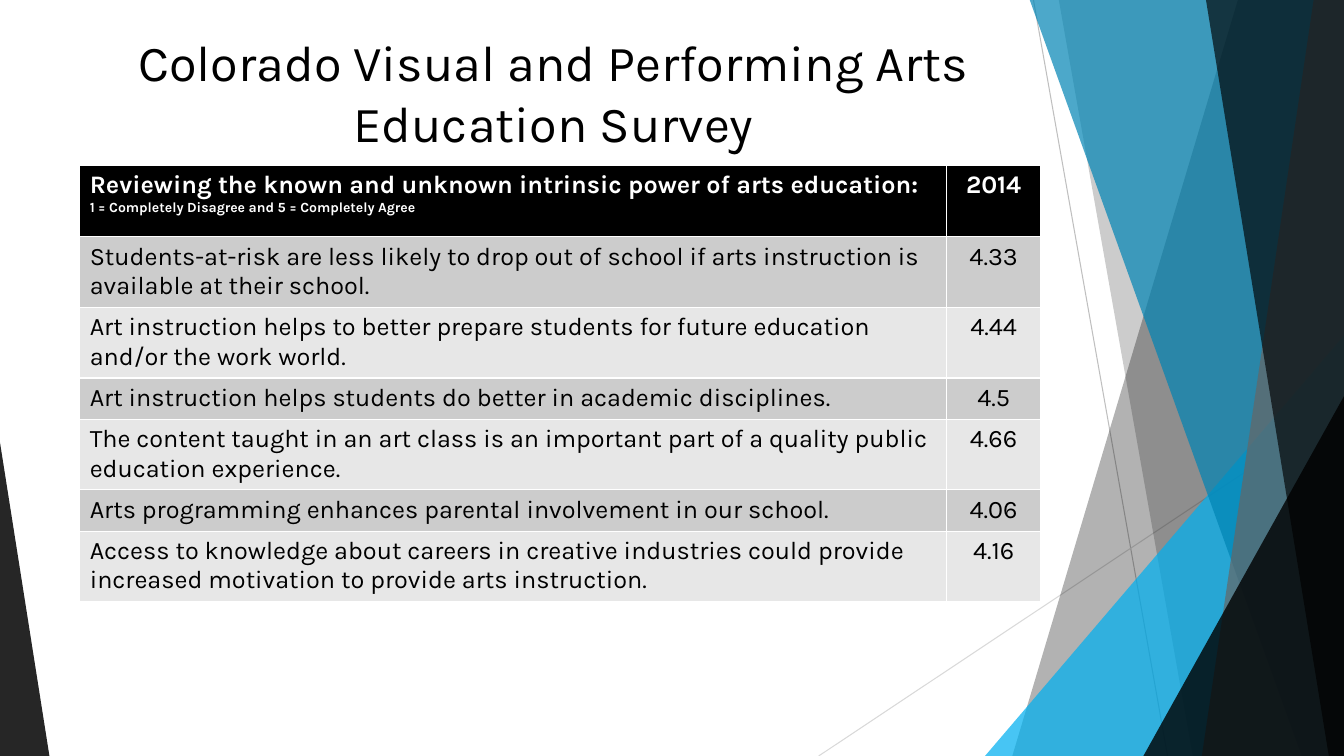
from lxml import etree
from pptx import Presentation
from pptx import util as u
from pptx.dml.color import RGBColor
from pptx.enum import shapes, text
from pptx.oxml import ns

TITLE = "Colorado Visual and Performing Arts Education Survey"
HEAD = ("Reviewing the known and unknown intrinsic power of arts education:", "2014")
SCALE = "1 = Completely Disagree and 5 = Completely Agree"
SCORES = [
    ("Students-at-risk are less likely to drop out of school if arts instruction is available at their school.", "4.33"),
    ("Art instruction helps to better prepare students for future education and/or the work world.", "4.44"),
    ("Art instruction helps students do better in academic disciplines.", "4.5"),
    ("The content taught in an art class is an important part of a quality public education experience.", "4.66"),
    ("Arts programming enhances parental involvement in our school.", "4.06"),
    ("Access to knowledge about careers in creative industries could provide increased motivation to provide arts instruction.", "4.16"),
]
COLS = (860, 93)
ROWS = (71, 70, 70, 41, 70, 41, 70)

HUES = {
    "black": "000000", "white": "FFFFFF", "dark": "CCCCCC", "light": "E7E7E7",
    "sky": "00B0F0", "blue": "0084B4", "gray": "666666",
    "rule": "BFBFBF", "pale": "D9D9D9",
}
FONT = "Karla"
WIDE, HIGH = 1333, 750
PX = 9144

RULES = [((1025, 0), (1158, HIGH), "rule"), ((WIDE, 403), (812, HIGH), "pale")]
DECOR = [
    ("band", (1228, 1004), "black", 30),
    ("band", (1050, 1183), "black", 20),
    ("peak", (977, 333, 356, 417, 1), "sky", 72),
    ("band", (1021, 1291), "blue", 70),
    ("band", (1303, 1192), "gray", 70),
    ("band", (1196, 1318), "black", 65),
    ("peak", (1134, 393, 199, 357, 1), "black", 80),
    ("peak", (0, 439, 49, 311, 0), "black", 85),
]


def emu(*vals):
    return [u.Emu(v * PX) for v in vals]


def hue(name):
    return RGBColor.from_string(HUES[name])


def style(para, size, name, bold=False, mid=False):
    font = para.font
    font.name, font.size, font.bold = FONT, u.Pt(size), bold
    font.color.rgb = hue(name)
    para.alignment = text.PP_ALIGN.CENTER if mid else text.PP_ALIGN.LEFT


def add_rule(slide, start, end, name):
    line = slide.shapes.add_connector(
        shapes.MSO_CONNECTOR.STRAIGHT, *emu(*start, *end))
    line.line.color.rgb = hue(name)
    line.line.width = u.Pt(0.75)
    etree.SubElement(line._element.spPr, ns.qn("a:effectLst"))


def add_decor(slide, kind, geom, name, alpha):
    if kind == "band":
        top, foot = geom
        form = slide.shapes.build_freeform(top, -1, scale=PX)
        form.add_line_segments([(WIDE, -1), (WIDE, HIGH), (foot, HIGH)])
        shape = form.convert_to_shape()
    else:
        *box, tip = geom
        shape = slide.shapes.add_shape(
            shapes.MSO_SHAPE.ISOSCELES_TRIANGLE, *emu(*box))
        shape.adjustments[0] = tip
    shape.shadow.inherit = False
    shape.line.fill.background()
    shape.fill.solid()
    shape.fill.fore_color.rgb = hue(name)
    color = shape._element.spPr.find(".//" + ns.qn("a:srgbClr"))
    etree.SubElement(color, ns.qn("a:alpha"), val=str(alpha * 1000))


def add_title(slide):
    title = slide.shapes.title
    title.left, title.top, title.width, title.height = emu(79, 19, 940, 144)
    frame = title.text_frame
    frame.text = TITLE
    frame.word_wrap = True
    frame.auto_size = text.MSO_AUTO_SIZE.NONE
    frame.vertical_anchor = text.MSO_ANCHOR.MIDDLE
    style(frame.paragraphs[0], 36, "black", mid=True)


def add_scores(slide):
    table = slide.shapes.add_table(
        len(ROWS), len(COLS), *emu(79, 164, sum(COLS), sum(ROWS))).table
    for col, width in zip(table.columns, emu(*COLS)):
        col.width = width
    for row, height in zip(table.rows, emu(*ROWS)):
        row.height = height
    for r, line in enumerate([HEAD, *SCORES]):
        top = r == 0
        back = "black" if top else ("light", "dark")[r % 2]
        for c, words in enumerate(line):
            cell = table.cell(r, c)
            cell.fill.solid()
            cell.fill.fore_color.rgb = hue(back)
            cell.text = words
            style(cell.text_frame.paragraphs[0], 18,
                  "white" if top else "black", top, c == 1)
    note = table.cell(0, 0).text_frame.add_paragraph()
    note.text = SCALE
    style(note, 10, "white", True)


def main():
    deck = Presentation()
    deck.slide_width, deck.slide_height = emu(WIDE, HIGH)
    slide = deck.slides.add_slide(deck.slide_layouts[5])
    for rule in RULES:
        add_rule(slide, *rule)
    for part in DECOR:
        add_decor(slide, *part)
    add_title(slide)
    add_scores(slide)
    deck.save("out.pptx")


if __name__ == "__main__":
    main()
